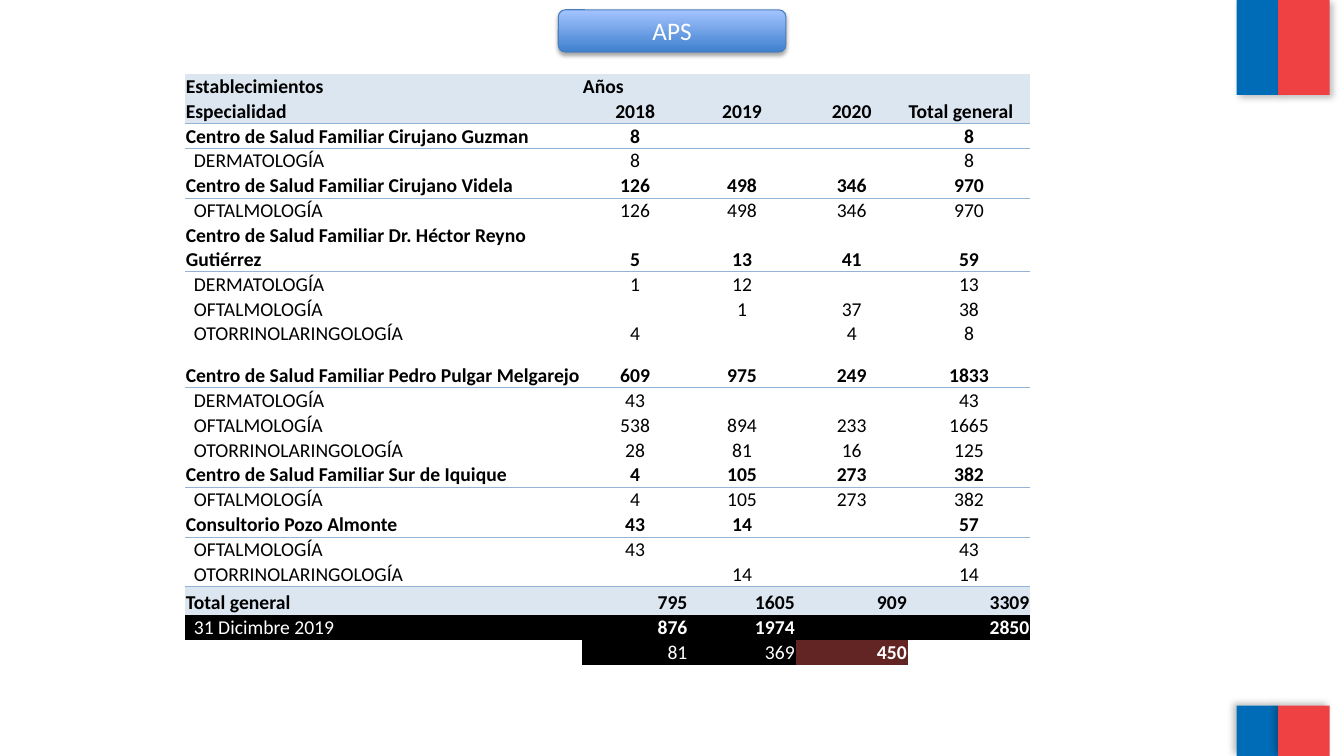
import pptx
import pptx.dml.color
import pptx.enum.shapes
import pptx.enum.text
import pptx.oxml
import pptx.oxml.ns
import pptx.util
from lxml import etree

Pt = pptx.util.Pt
qn = pptx.oxml.ns.qn
ALIGN = pptx.enum.text.PP_ALIGN
SHAPE = pptx.enum.shapes.MSO_SHAPE
MIDDLE = pptx.enum.text.MSO_ANCHOR.MIDDLE
BOTTOM = pptx.enum.text.MSO_ANCHOR.BOTTOM

FONT = "Calibri"
TEXT_SIZE = 14
NO_GRID_STYLE = "{2D5ABB26-0587-4C30-8999-92F81FD0307C}"
COLORS = {
    "flag_blue": "006CB7",
    "flag_red": "EF4144",
    "button_low": "3F80CE",
    "button_high": "A4C4FF",
    "button_line": "4B7EBC",
    "band": "DCE6F1",
    "rule": "95B3D7",
    "black": "000000",
    "white": "FFFFFF",
    "maroon": "632523",
}

COLUMN_WIDTHS = [283.7, 76, 76.7, 80, 87.6]
ROW_HEIGHT = 17.75
TALL_ROWS = {6: 34.8, 10: 29.8, 19: 20.4}

# Row kind: bold label, bold values, indent, value alignment, text, fill, rule below
ROW_STYLES = {
    "title": (True, True, False, ALIGN.LEFT, "black", "band", False),
    "header": (True, True, False, ALIGN.CENTER, "black", "band", True),
    "centre": (True, True, False, ALIGN.CENTER, "black", None, True),
    "specialty": (False, False, True, ALIGN.CENTER, "black", None, False),
    "last": (False, False, True, ALIGN.CENTER, "black", None, True),
    "total": (True, True, False, ALIGN.RIGHT, "black", "band", False),
    "closing": (False, True, True, ALIGN.RIGHT, "white", "black", False),
    "difference": (False, False, False, ALIGN.RIGHT, "white", "black", False),
}
ROWS = [
    ("title", "Establecimientos", "Años", "", "", ""),
    ("header", "Especialidad", "2018", "2019", "2020", "Total general"),
    ("centre", "Centro de Salud Familiar Cirujano Guzman", "8", "", "", "8"),
    ("specialty", "DERMATOLOGÍA", "8", "", "", "8"),
    ("centre", "Centro de Salud Familiar Cirujano Videla", "126", "498", "346", "970"),
    ("specialty", "OFTALMOLOGÍA", "126", "498", "346", "970"),
    ("centre", "Centro de Salud Familiar Dr. Héctor Reyno Gutiérrez", "5", "13", "41", "59"),
    ("specialty", "DERMATOLOGÍA", "1", "12", "", "13"),
    ("specialty", "OFTALMOLOGÍA", "", "1", "37", "38"),
    ("specialty", "OTORRINOLARINGOLOGÍA", "4", "", "4", "8"),
    ("centre", "Centro de Salud Familiar Pedro Pulgar Melgarejo", "609", "975", "249", "1833"),
    ("specialty", "DERMATOLOGÍA", "43", "", "", "43"),
    ("specialty", "OFTALMOLOGÍA", "538", "894", "233", "1665"),
    ("specialty", "OTORRINOLARINGOLOGÍA", "28", "81", "16", "125"),
    ("centre", "Centro de Salud Familiar Sur de Iquique", "4", "105", "273", "382"),
    ("specialty", "OFTALMOLOGÍA", "4", "105", "273", "382"),
    ("centre", "Consultorio Pozo Almonte", "43", "14", "", "57"),
    ("specialty", "OFTALMOLOGÍA", "43", "", "", "43"),
    ("last", "OTORRINOLARINGOLOGÍA", "", "14", "", "14"),
    ("total", "Total general", "795", "1605", "909", "3309"),
    ("closing", "31 Dicimbre 2019", "876", "1974", "", "2850"),
    ("difference", "", "81", "369", "450", ""),
]


def rgb(name):
    return pptx.dml.color.RGBColor.from_string(COLORS[name])


def add_shadow(shape, opacity, blur, distance, angle):
    shape.shadow.inherit = False
    effects = shape._element.spPr.find(qn("a:effectLst"))
    shadow = etree.SubElement(
        effects, qn("a:outerShdw"), blurRad=str(Pt(blur)), dist=str(Pt(distance)),
        dir=str(angle * 60000), algn="ctr", rotWithShape="0")
    color = etree.SubElement(shadow, qn("a:srgbClr"), val=COLORS["black"])
    etree.SubElement(color, qn("a:alpha"), val=str(opacity * 1000))


def add_flag(slide, top, height, shadow_angle):
    """Two adjoining bars, blue and red, at the right edge."""
    for color, left, width in (("flag_blue", 883.4, 29.6), ("flag_red", 913, 36.7)):
        bar = slide.shapes.add_shape(
            SHAPE.RECTANGLE, Pt(left), Pt(top), Pt(width), Pt(height))
        bar.fill.solid()
        bar.fill.fore_color.rgb = rgb(color)
        bar.line.fill.background()
        add_shadow(bar, 25, 5, 3, shadow_angle)


def add_run(paragraph, text, size, color, bold=False):
    run = paragraph.add_run()
    run.text = text
    run.font.name = FONT
    run.font.size = Pt(size)
    run.font.bold = bold
    run.font.color.rgb = rgb(color)


def add_button(slide, text):
    button = slide.shapes.add_shape(
        SHAPE.ROUNDED_RECTANGLE, Pt(398.8), Pt(7), Pt(162.6), Pt(30.2))
    button.fill.gradient()
    button.fill.gradient_angle = 90
    for stop, color in zip(button.fill.gradient_stops, ("button_low", "button_high")):
        stop.color.rgb = rgb(color)
    button.line.color.rgb = rgb("button_line")
    button.line.width = Pt(0.75)
    add_shadow(button, 35, 3.1, 1.8, 90)
    button.text_frame.vertical_anchor = MIDDLE
    paragraph = button.text_frame.paragraphs[0]
    paragraph.alignment = ALIGN.CENTER
    add_run(paragraph, text, 18, "white")


def add_bottom_rule(cell):
    line = pptx.oxml.parse_xml(
        f'<a:lnB {pptx.oxml.ns.nsdecls("a")} w="{Pt(0.5)}"><a:solidFill>'
        f'<a:srgbClr val="{COLORS["rule"]}"/></a:solidFill></a:lnB>')
    cell._tc.get_or_add_tcPr().insert(0, line)


def fill_cell(cell, text, bold, indent, alignment, color, fill, ruled):
    cell.margin_left = Pt(6.5 if indent else 0.7)
    cell.margin_right = cell.margin_top = Pt(0.7)
    cell.margin_bottom = Pt(0)
    cell.vertical_anchor = BOTTOM
    if fill:
        cell.fill.solid()
        cell.fill.fore_color.rgb = rgb(fill)
    else:
        cell.fill.background()
    if ruled:
        add_bottom_rule(cell)
    paragraph = cell.text_frame.paragraphs[0]
    paragraph.alignment = alignment
    if text:
        add_run(paragraph, text, TEXT_SIZE, color, bold)
    else:
        etree.SubElement(paragraph._p, qn("a:endParaRPr"), sz=str(TEXT_SIZE * 100))


def add_referrals_table(slide):
    heights = [TALL_ROWS.get(index, ROW_HEIGHT) for index in range(len(ROWS))]
    table = slide.shapes.add_table(
        len(ROWS), len(COLUMN_WIDTHS), Pt(132), Pt(52.7),
        Pt(sum(COLUMN_WIDTHS)), Pt(sum(heights))).table
    table.first_row = table.horz_banding = False
    table._tbl.tblPr.find(qn("a:tableStyleId")).text = NO_GRID_STYLE
    for column, width in zip(table.columns, COLUMN_WIDTHS):
        column.width = Pt(width)
    for row, height, (kind, *texts) in zip(table.rows, heights, ROWS):
        row.height = Pt(height)
        label_bold, value_bold, indent, value_align, color, row_fill, ruled = ROW_STYLES[kind]
        for index, (cell, text) in enumerate(zip(row.cells, texts)):
            is_label = index == 0
            bold = label_bold if is_label else value_bold
            alignment = ALIGN.LEFT if is_label else value_align
            fill = row_fill
            if kind == "header" and index == 4:
                alignment = ALIGN.LEFT
            if kind == "difference":
                fill = (None, "black", "black", "maroon", None)[index]
                bold = index == 3
            fill_cell(cell, text, bold, indent and is_label, alignment, color, fill, ruled)


def main():
    presentation = pptx.Presentation()
    presentation.slide_width = Pt(960)
    presentation.slide_height = Pt(540)
    slide = presentation.slides.add_slide(presentation.slide_layouts[6])
    add_flag(slide, 0, 67.8, 45)
    add_flag(slide, 504, 36, 215)
    add_button(slide, "APS")
    add_referrals_table(slide)
    presentation.save("out.pptx")


if __name__ == "__main__":
    main()
